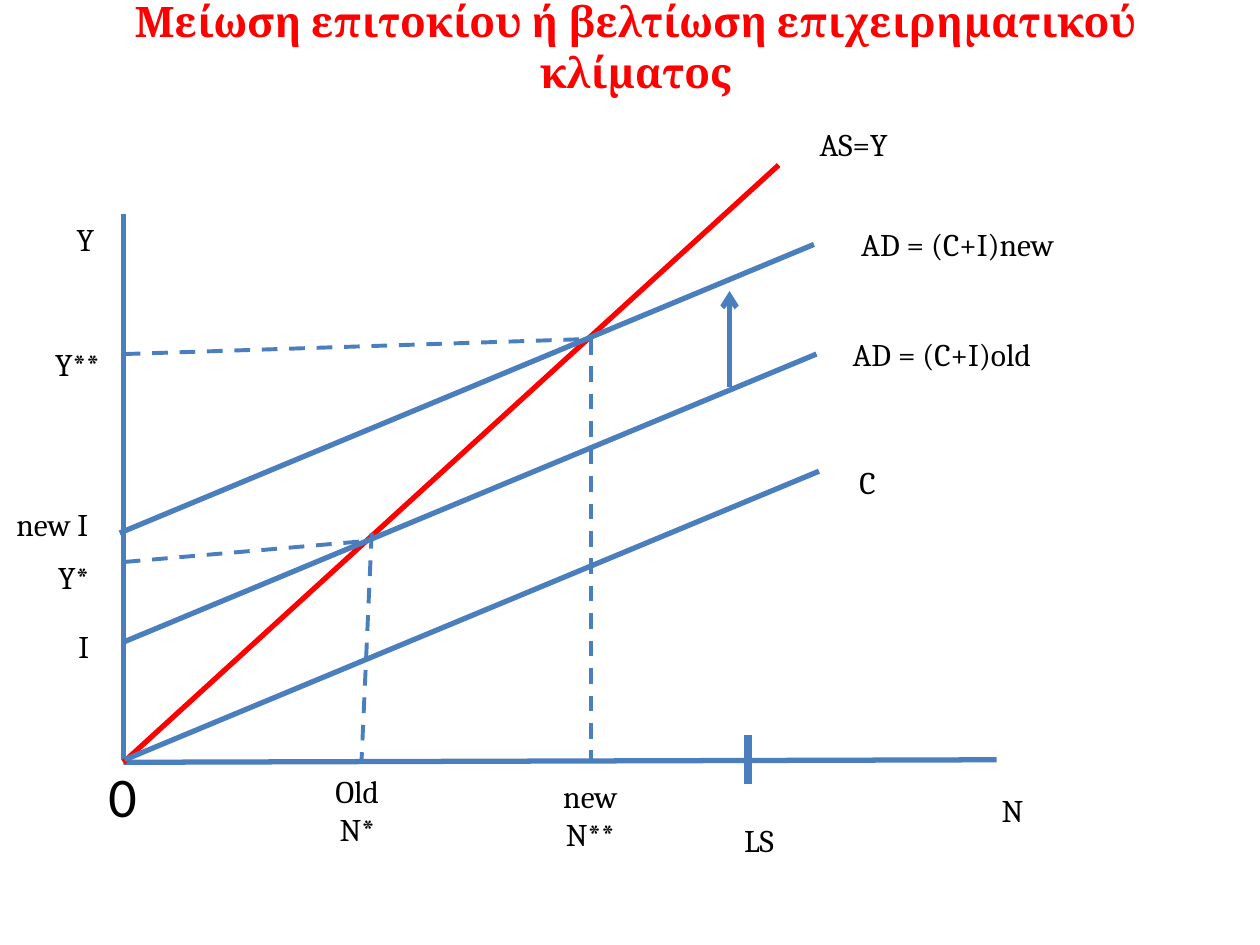
from lxml import etree
from pptx import Presentation
from pptx.dml.color import RGBColor
from pptx.enum.dml import MSO_LINE
from pptx.enum.shapes import MSO_CONNECTOR, MSO_SHAPE
from pptx.enum.text import MSO_ANCHOR, MSO_AUTO_SIZE, PP_ALIGN
from pptx.oxml.ns import qn
from pptx.util import Inches, Pt

STRAIGHT = MSO_CONNECTOR.STRAIGHT
RECTANGLE = MSO_SHAPE.RECTANGLE
DASH = MSO_LINE.DASH
MIDDLE, TOP = MSO_ANCHOR.MIDDLE, MSO_ANCHOR.TOP
CENTER, LEFT = PP_ALIGN.CENTER, PP_ALIGN.LEFT
NO_AUTOFIT = MSO_AUTO_SIZE.NONE
TITLE_AND_CONTENT = 1

COLORS = {"blue": "4B7EBC", "red": "FF0000", "black": "000000", "white": "FFFFFF"}

AXES = [
    ((0.98, 1.7), (0.98, 6.03)),
    ((7.91, 6.03), (0.98, 6.05)),
]
SUPPLY = ((0.98, 6.05), (6.18, 1.31))
# The demand curves are parallel: each has the same run and rise.
DEMAND_RUN, DEMAND_RISE = 5.51, 2.29
DEMAND_STARTS = [(0.95, 4.23), (0.99, 6.03), (0.97, 5.1)]
EQUILIBRIUM_GUIDES = [
    ((2.95, 4.23), (2.87, 6.03)),
    ((4.69, 2.69), (4.69, 6.05)),
    ((0.99, 4.46), (2.95, 4.29)),
    ((0.99, 2.81), (4.69, 2.69)),
]
LABOUR_SUPPLY_TICK = ((5.94, 5.83), (5.94, 6.22))
DEMAND_SHIFT = ((5.79, 3.07), (5.79, 2.31))

CURVE_LABELS = [
    ("Y", 0.51, 1.7, 0.31, 0.39),
    ("N", 7.68, 6.27, 0.71, 0.31),
    ("C", 6.57, 3.59, 0.63, 0.47),
    ("AD = (C+I)old", 6.57, 2.65, 1.81, 0.31),
    ("AD = (C+I)new", 6.5, 1.78, 2.2, 0.31),
    ("AS=Y", 6.34, 0.99, 0.87, 0.31),
    ("Old N*", 2.4, 6.18, 0.87, 0.49),
]
LEVEL_LABELS = [
    ("LS", 5.71, 6.43, 0.63, 0.47),
    ("new N**", 4.25, 6.22, 0.87, 0.49),
    ("Y*", 0.35, 4.46, 0.47, 0.24),
    ("Y**", 0.28, 2.69, 0.67, 0.39),
    ("I", 0.51, 5.01, 0.31, 0.24),
    ("new I", 0, 3.95, 0.83, 0.42),
]


def color(name):
    return RGBColor.from_string(COLORS[name])


def write_text(shape, text, *, size=18, font="Cambria", ink="black",
               bold=False, align=CENTER, anchor=MIDDLE):
    frame = shape.text_frame
    frame.word_wrap = True
    frame.auto_size = NO_AUTOFIT
    frame.vertical_anchor = anchor
    paragraph = frame.paragraphs[0]
    paragraph.alignment = align
    paragraph.space_before = Pt(0)
    run = paragraph.add_run()
    run.text = text
    run.font.size = Pt(size)
    run.font.name = font
    run.font.bold = bold
    run.font.color.rgb = color(ink)


def place(shape, left, top, width, height):
    shape.left, shape.top = Inches(left), Inches(top)
    shape.width, shape.height = Inches(width), Inches(height)


def add_line(slide, start, end, ink="blue", width=3, dash=None, arrow=False):
    points = [Inches(value) for value in (*start, *end)]
    connector = slide.shapes.add_connector(STRAIGHT, *points)
    line = connector.line
    line.color.rgb = color(ink)
    line.width = Pt(width)
    if dash:
        line.dash_style = dash
    if arrow:
        etree.SubElement(line._get_or_add_ln(), qn("a:tailEnd"), type="arrow")
    etree.SubElement(connector._element.spPr, qn("a:effectLst"))


def add_label(slide, text, left, top, width, height):
    box = [Inches(value) for value in (left, top, width, height)]
    label = slide.shapes.add_shape(RECTANGLE, *box)
    label.shadow.inherit = False
    label.fill.solid()
    label.fill.fore_color.rgb = color("white")
    label.line.fill.background()
    write_text(label, text)


def add_title(slide):
    title = slide.shapes.title
    place(title, 0.28, 0.13, 9.53, 0.47)
    write_text(title, "Μείωση επιτοκίου ή βελτίωση επιχειρηματικού κλίματος",
               size=24, ink="red", bold=True)


def add_origin(slide):
    """Set the body placeholder's 0 under the crossing of the axes."""
    body = slide.placeholders[1]
    place(body, 0.28, 0.99, 9.37, 6.22)
    body.text_frame.margin_left = Inches(0.58)
    body.text_frame.margin_top = Inches(5.05)
    write_text(body, "0", size=32, font="Calibri", align=LEFT, anchor=TOP)
    properties = body.text_frame.paragraphs[0]._p.get_or_add_pPr()
    properties.set("marL", "0")
    properties.set("indent", "0")
    etree.SubElement(properties, qn("a:buNone"))


def main():
    deck = Presentation()
    deck.slide_width, deck.slide_height = Inches(10), Inches(7.5)
    slide = deck.slides.add_slide(deck.slide_layouts[TITLE_AND_CONTENT])

    add_title(slide)
    add_origin(slide)
    for start, end in AXES:
        add_line(slide, start, end)
    add_line(slide, *SUPPLY, ink="red")
    for x, y in DEMAND_STARTS:
        add_line(slide, (x, y), (x + DEMAND_RUN, y - DEMAND_RISE))
    for label in CURVE_LABELS:
        add_label(slide, *label)
    for start, end in EQUILIBRIUM_GUIDES:
        add_line(slide, start, end, width=2.25, dash=DASH)
    add_line(slide, *LABOUR_SUPPLY_TICK, width=4.5)
    for label in LEVEL_LABELS:
        add_label(slide, *label)
    add_line(slide, *DEMAND_SHIFT, arrow=True)

    deck.save("out.pptx")


if __name__ == "__main__":
    main()
